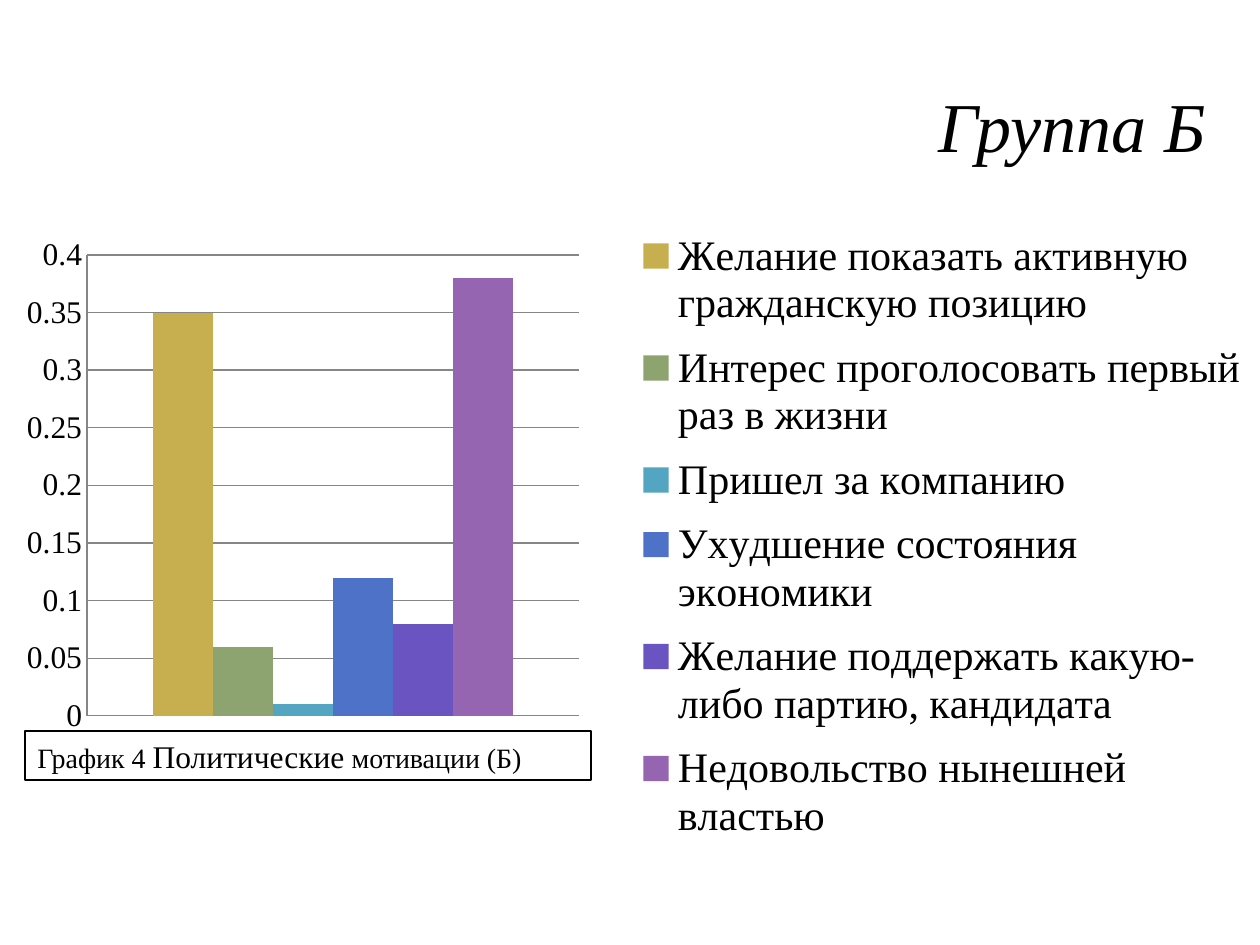
from lxml import etree
from pptx import Presentation
from pptx import util as u
from pptx.chart.data import CategoryChartData
from pptx.dml.color import RGBColor
from pptx.enum import chart as charts, shapes, text
from pptx.oxml.ns import qn

PX = u.Inches(1) / 126
FONT = "Times New Roman"
CHART_WIDTH, CHART_HEIGHT = 1260, 644
COLORS = {"ink": "000000", "grid": "868686", "gold": "CEB966", "green": "9CB084",
          "teal": "6BB1C9", "blue": "6585CF", "violet": "7E6BC9", "plum": "A379BB"}
MOTIVES = [
    ("Желание показать активную гражданскую позицию", [0.35], "gold"),
    ("Интерес проголосовать первый раз в жизни", [0.06], "green"),
    ("Пришел за компанию", [0.01], "teal"),
    ("Ухудшение состояния экономики", [0.12], "blue"),
    ("Желание поддержать какую-либо партию, кандидата", [0.08], "violet"),
    ("Недовольство нынешней властью", [0.38], "plum"),
    ("Series 7", [], "gold"),
]


def color(name):
    return RGBColor.from_string(COLORS[name])


def px(*lengths):
    return [round(length * PX) for length in lengths]


def set_all(target, **values):
    for name, value in values.items():
        setattr(target, name, value)


def set_font(font, size, **values):
    set_all(font, name=FONT, size=u.Pt(size), **values)
    font.color.rgb = color("ink")


def add_value(parent, tag, value):
    etree.SubElement(parent, qn(f"c:{tag}")).set("val", str(value))


def make_layout(left, top, width, height, inner=False):
    """Return a manual c:layout element from px within the chart."""
    layout = etree.Element(qn("c:layout"))
    manual = etree.SubElement(layout, qn("c:manualLayout"))
    settings = {"layoutTarget": "inner"} if inner else {}
    settings.update(xMode="edge", yMode="edge",
                    x=left / CHART_WIDTH, y=top / CHART_HEIGHT,
                    w=width / CHART_WIDTH, h=height / CHART_HEIGHT)
    for tag, value in settings.items():
        add_value(manual, tag, value)
    return layout


def make_hidden_entry(index):
    entry = etree.Element(qn("c:legendEntry"))
    add_value(entry, "idx", index)
    add_value(entry, "delete", 1)
    return entry


def add_title(slide, words):
    title = slide.shapes.title
    left, top, width, height = px(84, 46, 1134, 158)
    set_all(title, left=left, top=top, width=width, height=height)
    set_all(title.text_frame, text=words, word_wrap=True,
            vertical_anchor=text.MSO_ANCHOR.MIDDLE)
    paragraph = title.text_frame.paragraphs[0]
    paragraph.alignment = text.PP_ALIGN.RIGHT
    set_font(paragraph.runs[0].font, 40, italic=True)


def style_value_axis(axis):
    set_all(axis, minimum_scale=0, maximum_scale=0.4, major_unit=0.05,
            has_major_gridlines=True, major_tick_mark=charts.XL_TICK_MARK.NONE)
    set_all(axis.tick_labels, number_format="General", number_format_is_linked=False)
    for line in (axis.format.line, axis.major_gridlines.format.line):
        line.color.rgb = color("grid")
        line.width = u.Pt(0.75)


def arrange_chart(chart):
    """Place the plot and legend, and drop the empty series from the legend."""
    plot_area = chart.element.find(f".//{qn('c:plotArea')}")
    legend_position = chart.element.find(f".//{qn('c:legendPos')}")
    for parent in (plot_area, legend_position.getparent()):
        for layout in parent.findall(qn("c:layout")):
            parent.remove(layout)
    plot_area.insert(0, make_layout(87, 41, 492, 461, inner=True))
    legend_position.addnext(make_layout(645, 1, 615, 642))
    for index, (_, values, _) in enumerate(MOTIVES):
        if not values:
            legend_position.addnext(make_hidden_entry(index))


def add_motive_chart(slide):
    data = CategoryChartData(number_format="General")
    data.categories = ["1"]
    for name, values, _ in MOTIVES:
        data.add_series(name, values)
    chart = slide.shapes.add_chart(charts.XL_CHART_TYPE.COLUMN_CLUSTERED,
                                   *px(0, 214, CHART_WIDTH, CHART_HEIGHT), data).chart
    set_all(chart, has_title=False, has_legend=True)
    set_font(chart.font, 18)
    chart.category_axis.visible = False
    style_value_axis(chart.value_axis)

    plot = chart.plots[0]
    set_all(plot, gap_width=219, overlap=0, vary_by_categories=False)
    for series, (_, _, fill) in zip(plot.series, MOTIVES):
        series.format.fill.solid()
        set_all(series.format.fill.fore_color, rgb=color(fill), brightness=-0.1)

    legend = chart.legend
    set_all(legend, position=charts.XL_LEGEND_POSITION.RIGHT, include_in_layout=True)
    set_font(legend.font, 24)
    arrange_chart(chart)


def add_caption(slide, runs):
    box = slide.shapes.add_shape(shapes.MSO_SHAPE.RECTANGLE, *px(25, 731, 566, 49))
    box.shadow.inherit = False
    box.fill.background()
    box.line.color.rgb = color("ink")
    box.line.width = u.Pt(0.75)
    set_all(box.text_frame, word_wrap=True, vertical_anchor=text.MSO_ANCHOR.TOP)
    paragraph = box.text_frame.paragraphs[0]
    set_all(paragraph, alignment=text.PP_ALIGN.LEFT, space_after=u.Pt(10))
    for words, size in runs:
        run = paragraph.add_run()
        run.text = words
        set_font(run.font, size)


def main():
    presentation = Presentation()
    set_all(presentation, slide_width=u.Inches(10), slide_height=u.Inches(7.5))
    slide = presentation.slides.add_slide(presentation.slide_layouts[5])
    add_title(slide, "Группа Б")
    add_motive_chart(slide)
    add_caption(slide, [("График 4 ", 16), ("Политические", 18), (" мотивации (Б)", 16)])
    presentation.save("out.pptx")


if __name__ == "__main__":
    main()
